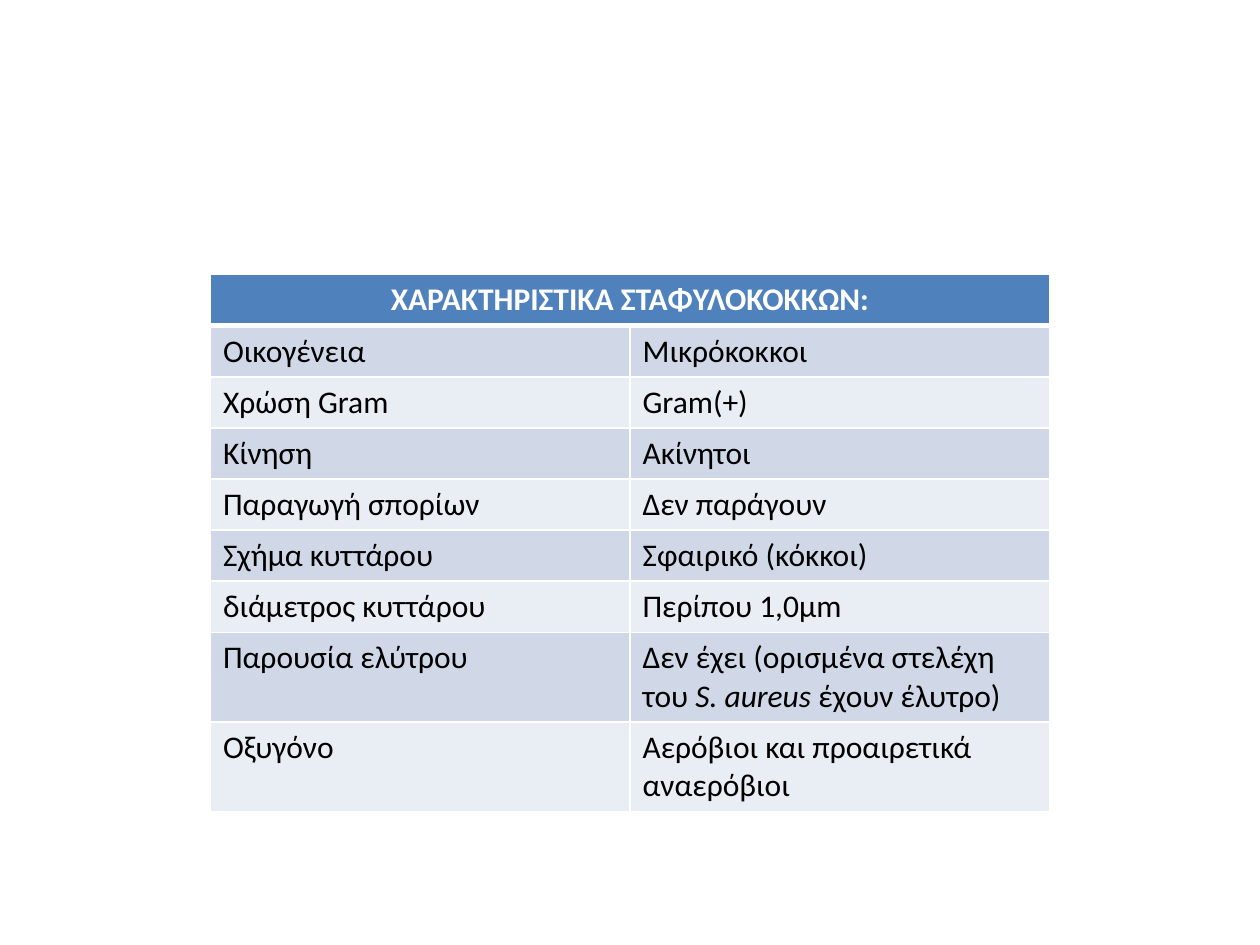
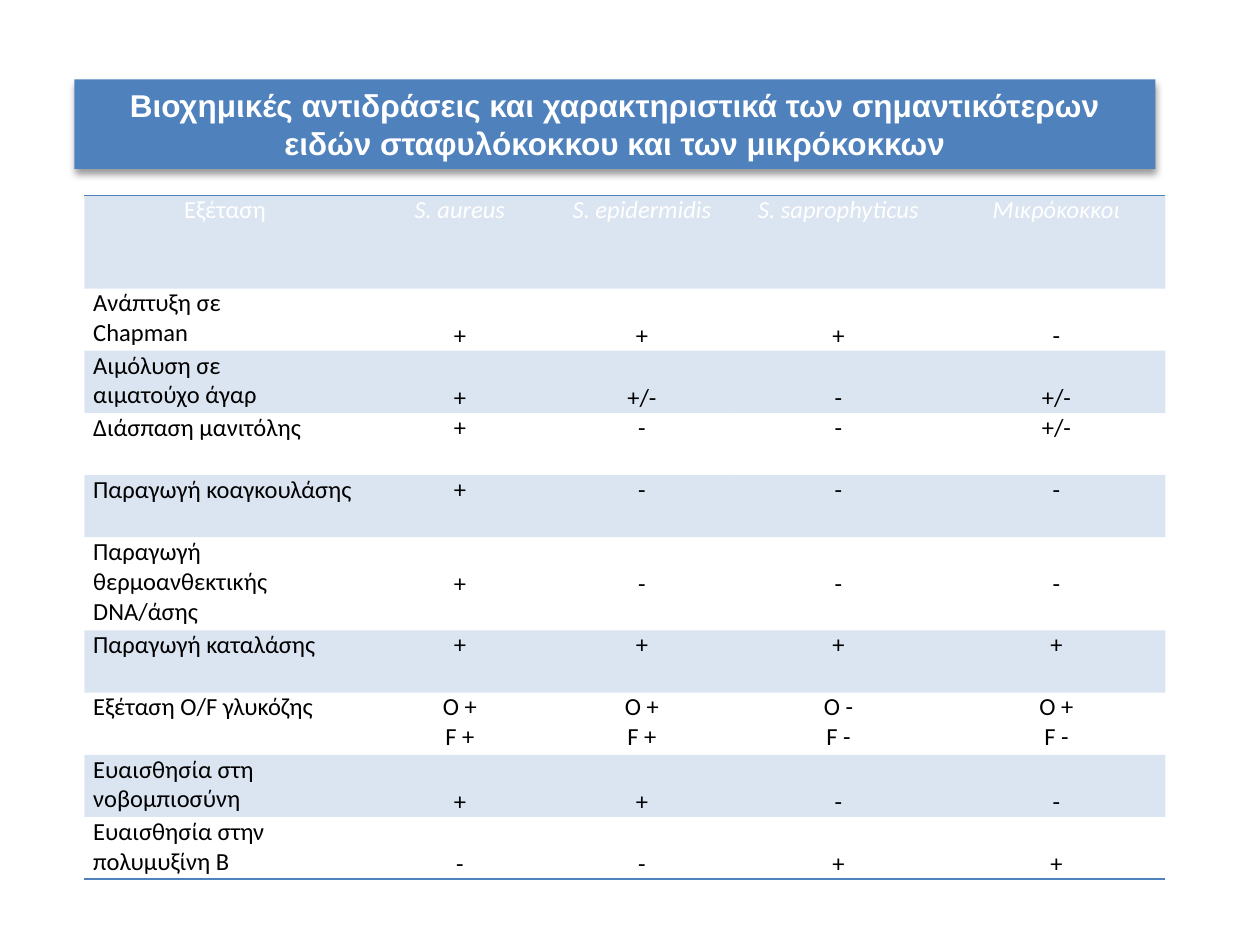
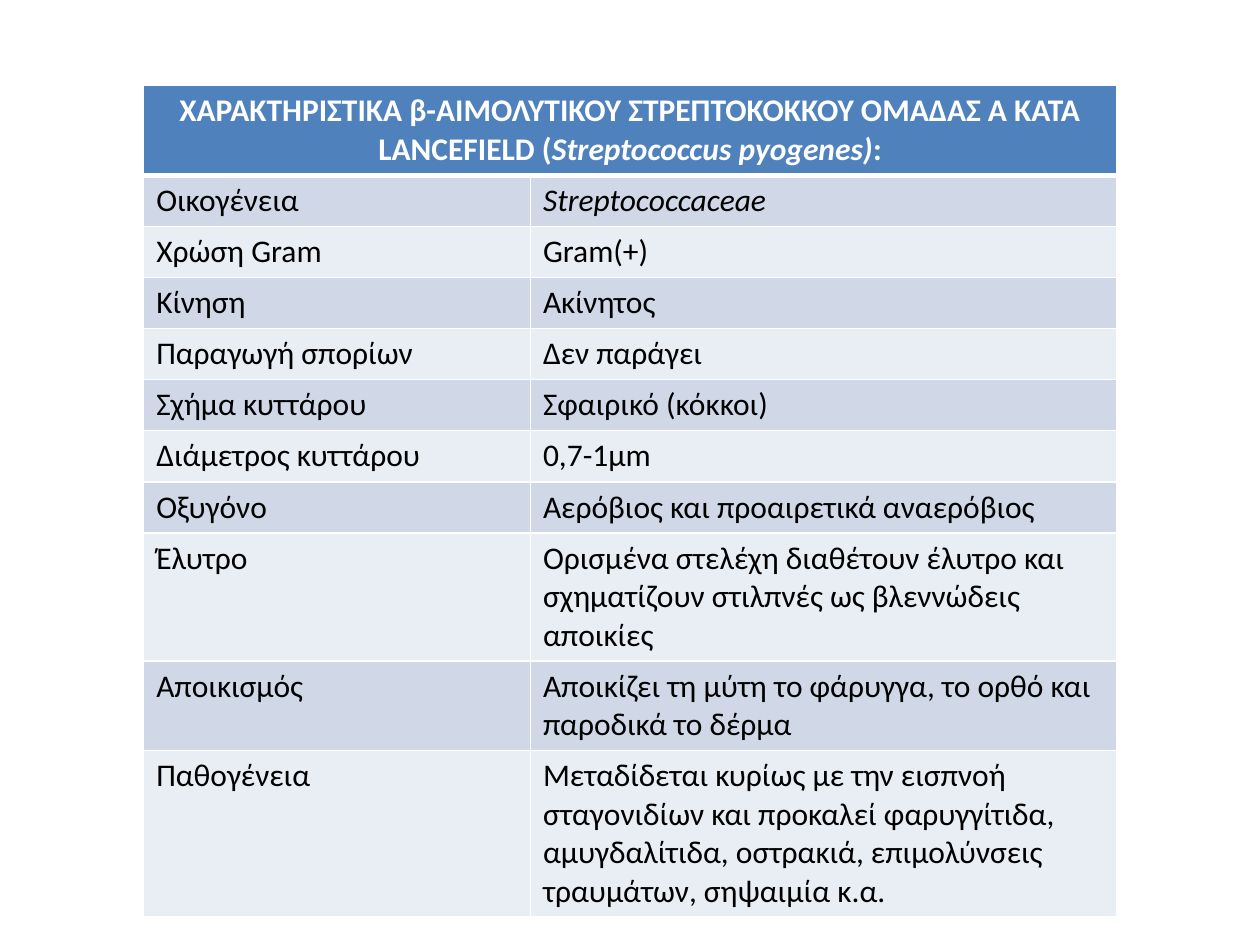
from lxml.etree import SubElement
from pptx import Presentation
from pptx.dml.color import RGBColor
from pptx.enum.shapes import MSO_SHAPE
from pptx.enum.text import MSO_ANCHOR, PP_ALIGN
from pptx.oxml.ns import qn
from pptx.util import Inches, Pt

BLUE = RGBColor(0x4F, 0x81, 0xBD)
BAND_DARK = RGBColor(0xD0, 0xD8, 0xE8)
BAND_LIGHT = RGBColor(0xE9, 0xED, 0xF4)
WHITE = RGBColor(0xFF, 0xFF, 0xFF)
BLACK = RGBColor(0x00, 0x00, 0x00)
BODY_FONT = "Calibri"
TITLE_FONT = "Arial"
BLANK_LAYOUT = 6
SIDES = ("L", "R", "T", "B")
ROW_HEIGHT = 0.4
LINE_UNIT = 5.43 / 11

STAPHYLOCOCCI = [
    ("Οικογένεια", "Μικρόκοκκοι"),
    ("Χρώση Gram", "Gram(+)"),
    ("Κίνηση", "Ακίνητοι"),
    ("Παραγωγή σπορίων", "Δεν παράγουν"),
    ("Σχήμα κυττάρου", "Σφαιρικό (κόκκοι)"),
    ("διάμετρος κυττάρου", "Περίπου 1,0μm"),
    ("Παρουσία ελύτρου", "Δεν έχει (ορισμένα στελέχη του *S. aureus *έχουν έλυτρο)"),
    ("Οξυγόνο", "Αερόβιοι και προαιρετικά αναερόβιοι"),
]

STREPTOCOCCUS = [
    ("Οικογένεια", "*Streptococcaceae*"),
    ("Χρώση Gram", "Gram(+)"),
    ("Κίνηση", "Ακίνητος"),
    ("Παραγωγή σπορίων", "Δεν παράγει"),
    ("Σχήμα κυττάρου", "Σφαιρικό (κόκκοι)"),
    ("Διάμετρος κυττάρου", "0,7-1μm"),
    ("Οξυγόνο", "Αερόβιος και προαιρετικά αναερόβιος"),
    ("Έλυτρο", "Ορισμένα στελέχη διαθέτουν έλυτρο και σχηματίζουν στιλπνές ως βλεννώδεις αποικίες"),
    ("Αποικισμός", "Αποικίζει τη μύτη το φάρυγγα, το ορθό και παροδικά το δέρμα"),
    ("Παθογένεια", "Μεταδίδεται κυρίως με την εισπνοή σταγονιδίων και προκαλεί φαρυγγίτιδα, "
                   "αμυγδαλίτιδα, οστρακιά, επιμολύνσεις τραυμάτων, σηψαιμία κ.α."),
]

TOP, MIDDLE, BOTTOM = MSO_ANCHOR.TOP, MSO_ANCHOR.MIDDLE, MSO_ANCHOR.BOTTOM
REACTIONS = [
    (1.5, TOP, ("Εξέταση", "*S. aureus*", "*S. epidermidis*", "*S. saprophyticus*", "*Μικρόκοκκοι*")),
    (1, BOTTOM, ("Ανάπτυξη σε\nChapman", "+", "+", "+", "-")),
    (1, BOTTOM, ("Αιμόλυση σε\nαιματούχο άγαρ", "+", "+/-", "-", "+/-")),
    (1, TOP, ("Διάσπαση μανιτόλης", "+", "-", "-", "+/-")),
    (1, TOP, ("Παραγωγή κοαγκουλάσης", "+", "-", "-", "-")),
    (1.5, MIDDLE, ("Παραγωγή θερμοανθεκτικής DNA/άσης", "+", "-", "-", "-")),
    (1, TOP, ("Παραγωγή καταλάσης", "+", "+", "+", "+")),
    (1, TOP, ("Εξέταση Ο/F γλυκόζης", "O +\nF +", "O +\nF +", "O -\nF -", "O +\nF -")),
    (1, BOTTOM, ("Ευαισθησία στη νοβομπιοσύνη", "+", "+", "-", "-")),
    (1, BOTTOM, ("Ευαισθησία στην πολυμυξίνη Β", "-", "-", "+", "+")),
]


def write_text(frame, text, size, color, font=BODY_FONT, bold=False, align=PP_ALIGN.LEFT):
    for index, line in enumerate(text.split("\n")):
        para = frame.add_paragraph() if index else frame.paragraphs[0]
        para.alignment = align
        para.font.size = Pt(size)
        para.font.name = font
        para.font.bold = bold
        para.font.color.rgb = color
        for part, words in enumerate(line.split("*")):
            if words:
                span = para.add_run()
                span.text = words
                if part % 2:
                    span.font.italic = True


def set_alpha(color_format_parent, percent):
    SubElement(color_format_parent, qn("a:alpha"), val=str(percent * 1000))


def set_borders(cell, borders):
    properties = cell._tc.get_or_add_tcPr()
    for side in SIDES:
        color, width = borders.get(side, (None, 0))
        line = SubElement(properties, qn(f"a:ln{side}"), w=str(Pt(width)))
        if color is None:
            SubElement(line, qn("a:noFill"))
        else:
            fill = SubElement(line, qn("a:solidFill"))
            SubElement(fill, qn("a:srgbClr"), val=str(color))


def fill_cell(cell, color, alpha=100):
    cell.fill.solid()
    cell.fill.fore_color.rgb = color
    if alpha < 100:
        set_alpha(cell._tc.tcPr.find(".//" + qn("a:solidFill") + "[last()]/../" + qn("a:solidFill") + "/" + qn("a:srgbClr")), alpha)


def add_plain_table(page, left, top, widths, heights):
    frame = page.shapes.add_table(len(heights), len(widths), Inches(left), Inches(top),
                                  Inches(sum(widths)), Inches(sum(heights)))
    table = frame.table
    table.first_row = False
    table.horz_banding = False
    for column, width in zip(table.columns, widths):
        column.width = Inches(width)
    for row, height in zip(table.rows, heights):
        row.height = Inches(height)
    return table


def add_characteristics(page, heading, rows, left, top, widths):
    table = add_plain_table(page, left, top, widths, [ROW_HEIGHT] * (len(rows) + 1))
    thin = {side: (WHITE, 1) for side in SIDES}
    header = table.cell(0, 0)
    header.merge(table.cell(0, 1))
    for column in range(2):
        cell = table.cell(0, column)
        set_borders(cell, thin | {"B": (WHITE, 3)})
        fill_cell(cell, BLUE)
    write_text(header.text_frame, heading, 18, WHITE, bold=True, align=PP_ALIGN.CENTER)
    for number, row in enumerate(rows, 1):
        for column, text in enumerate(row):
            cell = table.cell(number, column)
            set_borders(cell, thin | {"T": (WHITE, 3 if number == 1 else 1)})
            fill_cell(cell, BAND_DARK if number % 2 else BAND_LIGHT)
            write_text(cell.text_frame, text, 18, BLACK)


def add_reactions(page, left, top, widths):
    table = add_plain_table(page, left, top, widths, [units * LINE_UNIT for units, _, _ in REACTIONS])
    outer_lines = {0: {"T": (BLUE, 1)}, len(REACTIONS) - 1: {"B": (BLUE, 1)}}
    for number, (_, anchor, texts) in enumerate(REACTIONS):
        for column, text in enumerate(texts):
            cell = table.cell(number, column)
            cell.margin_left = cell.margin_right = Inches(0.07)
            cell.margin_top = cell.margin_bottom = 0
            cell.vertical_anchor = anchor if column else TOP
            set_borders(cell, outer_lines.get(number, {}))
            if number % 2:
                cell.fill.background()
            else:
                cell.fill.solid()
                cell.fill.fore_color.rgb = BLUE
                set_alpha(cell._tc.tcPr.find(qn("a:solidFill")).find(qn("a:srgbClr")), 20)
            centred = column or number == 0
            write_text(cell.text_frame, text, 14, BLACK if number else WHITE,
                       align=PP_ALIGN.CENTER if centred else PP_ALIGN.LEFT)


def add_title_band(page, text, left, top, width, height):
    band = page.shapes.add_shape(MSO_SHAPE.RECTANGLE, Inches(left), Inches(top),
                                 Inches(width), Inches(height))
    band.fill.solid()
    band.fill.fore_color.rgb = BLUE
    band.line.fill.background()
    band.shadow.inherit = False
    effects = band._element.spPr.find(qn("a:effectLst"))
    shadow = SubElement(effects, qn("a:outerShdw"), blurRad=str(Pt(4)), dist=str(Pt(3)),
                        dir="5400000", rotWithShape="0")
    set_alpha(SubElement(shadow, qn("a:srgbClr"), val=str(BLACK)), 40)
    band.text_frame.word_wrap = True
    band.text_frame.vertical_anchor = MIDDLE
    write_text(band.text_frame, text, 18, WHITE, TITLE_FONT, True, PP_ALIGN.CENTER)


def main():
    deck = Presentation()
    deck.slide_width = Inches(10)
    deck.slide_height = Inches(7.5)
    first, second, third = [deck.slides.add_slide(deck.slide_layouts[BLANK_LAYOUT]) for _ in range(3)]

    add_characteristics(first, "ΧΑΡΑΚΤΗΡΙΣΤΙΚΑ ΣΤΑΦΥΛΟΚΟΚΚΩΝ:", STAPHYLOCOCCI,
                        1.67, 2.18, [3.33, 3.33])
    add_reactions(second, 0.67, 1.55, [2.23, 1.5, 1.39, 1.73, 1.73])
    add_title_band(second, "Βιοχημικές αντιδράσεις και χαρακτηριστικά των σημαντικότερων "
                           "ειδών σταφυλόκοκκου και των μικρόκοκκων", 0.59, 0.63, 8.58, 0.71)
    add_characteristics(third, "ΧΑΡΑΚΤΗΡΙΣΤΙΚΑ β-ΑΙΜΟΛΥΤΙΚΟΥ ΣΤΡΕΠΤΟΚΟΚΚΟΥ ΟΜΑΔΑΣ Α ΚΑΤΑ "
                               "LANCEFIELD (*Streptococcus pyogenes)*:", STREPTOCOCCUS,
                        1.14, 0.68, [3.07, 4.65])
    deck.save("out.pptx")


if __name__ == "__main__":
    main()
